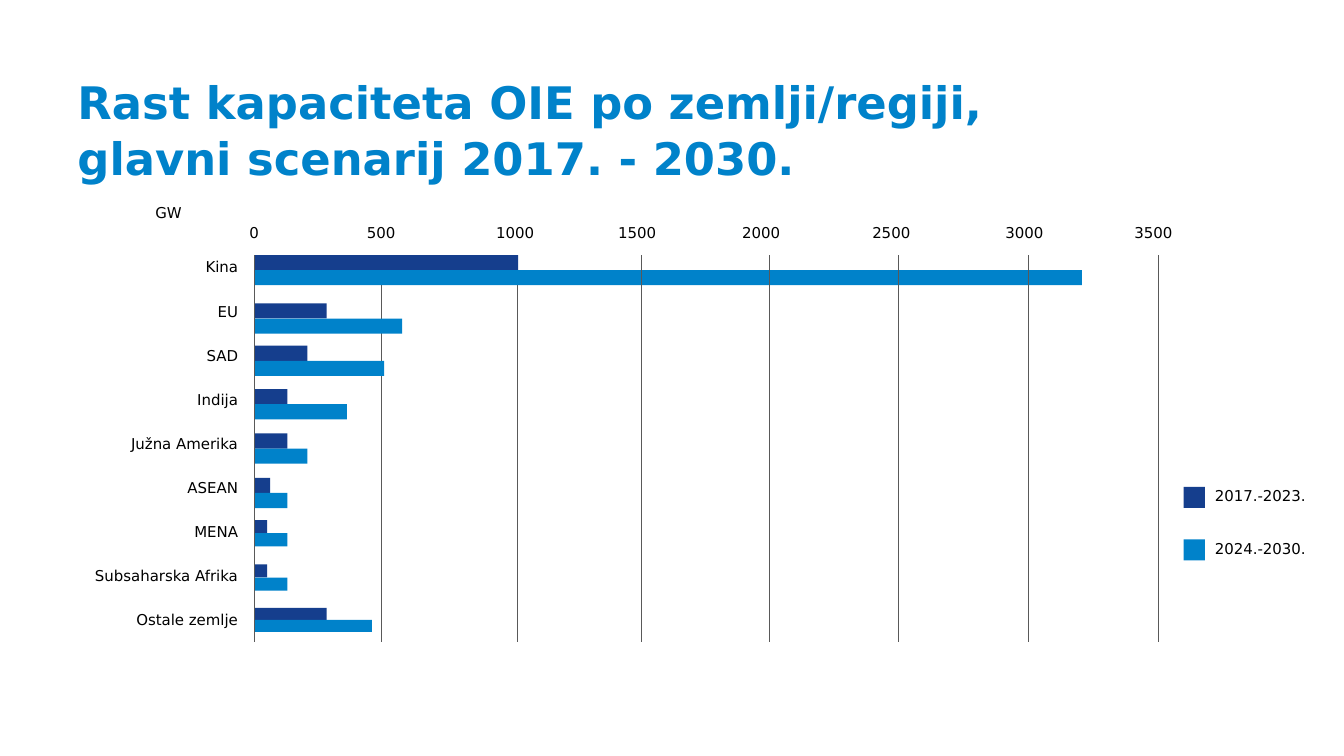
from lxml import etree
from pptx import Presentation
from pptx import util as u
from pptx.dml.color import RGBColor
from pptx.enum import shapes, text
from pptx.oxml.ns import qn

COLORS = {"early": "153E8D", "late": "0082CA", "grid": "595959", "label": "000000"}
LABEL = {"size": u.Pt(10.7), "name": "DejaVu Sans", "bold": False}
TITLE = {"size": u.Pt(32), "name": "DejaVu Sans", "bold": True}
ALIGN = text.PP_ALIGN


def add_bar(parent, left, top, width, height, color):
    shape = parent.add_shape(shapes.MSO_SHAPE.RECTANGLE, *map(u.Inches, (left, top, width, height)))
    shape.shadow.inherit = False
    shape.fill.solid()
    shape.fill.fore_color.rgb = RGBColor.from_string(COLORS[color])
    shape.line.fill.background()


def add_text(content, left, top, width, height=0.28, align=ALIGN.LEFT, style=LABEL, color="label"):
    box = slide.shapes.add_textbox(*map(u.Inches, (left, top, width, height)))
    box.text_frame.word_wrap = True
    paragraph = box.text_frame.paragraphs[0]
    paragraph.alignment = align
    run = paragraph.add_run()
    run.text = content
    for name, value in style.items():
        setattr(run.font, name, value)
    run.font.color.rgb = RGBColor.from_string(COLORS[color])
    return box


presentation = Presentation()
presentation.slide_width = u.Inches(13.33)
presentation.slide_height = u.Inches(7.5)
slide = presentation.slides.add_slide(presentation.slide_layouts[6])

AXIS_LEFT, GRID_TOP, GRID_BOTTOM = 2.52, 2.53, 6.37
ROW_TOP, ROW_STEP = 2.51, 0.4375
regions = [
    ("Kina", 2.53, 0.15, 2.62, 8.21),
    ("EU", 3.01, 0.15, 0.72, 1.47),
    ("SAD", 3.43, 0.15, 0.53, 1.29),
    ("Indija", 3.86, 0.15, 0.33, 0.92),
    ("Južna Amerika", 4.3, 0.15, 0.33, 0.53),
    ("ASEAN", 4.74, 0.15, 0.16, 0.33),
    ("MENA", 5.16, 0.13, 0.13, 0.33),
    ("Subsaharska Afrika", 5.6, 0.13, 0.13, 0.33),
    ("Ostale zemlje", 6.03, 0.12, 0.72, 1.17),
]
gridlines_behind = [3.78, 5.13]
gridlines_front = [AXIS_LEFT, 6.36, 7.63, 8.91, 10.2, 11.49]

plot = slide.shapes.add_group_shape().shapes
for positions in (gridlines_behind, gridlines_front):
    for x in positions:
        line = plot.add_connector(
            shapes.MSO_CONNECTOR.STRAIGHT, *map(u.Inches, (x, GRID_TOP, x, GRID_BOTTOM)))
        line.line.color.rgb = RGBColor.from_string(COLORS["grid"])
        line.line.width = u.Pt(0.75)
        etree.SubElement(line.element.spPr, qn("a:effectLst"))
    if positions is gridlines_behind:
        for region, top, height, early, late in regions:
            add_bar(plot, AXIS_LEFT, top, early, height, "early")
            add_bar(plot, AXIS_LEFT, top + height, late, height, "late")

tick_lefts = [2.11, 3.37, 4.7, 5.91, 7.14, 8.43, 9.75, 11.03]
for index, left in enumerate(tick_lefts):
    add_text(str(index * 500), left, 2.17, 0.82, align=ALIGN.CENTER)

for index, region in enumerate(regions):
    add_text(region[0], 0.66, ROW_TOP + index * ROW_STEP, 1.8, align=ALIGN.RIGHT)

for index, (period, color) in enumerate([("2017.-2023.", "early"), ("2024.-2030.", "late")]):
    offset = index * 0.52
    add_bar(slide.shapes, 11.74, 4.83 + offset, 0.21, 0.21, color)
    add_text(period, 11.95, 4.78 + offset, 1.38)

add_text("GW", 1.08, 1.97, 0.82, align=ALIGN.RIGHT)

title = add_text("Rast kapaciteta OIE po zemlji/regiji, glavni scenarij 2017. - 2030.",
                 0.67, 0.62, 9.85, 1.64, style=TITLE, color="late")
title.text_frame.margin_top = title.text_frame.margin_bottom = u.Inches(0.1)
title.text_frame.paragraphs[0].line_spacing = 1.04

presentation.save("out.pptx")
